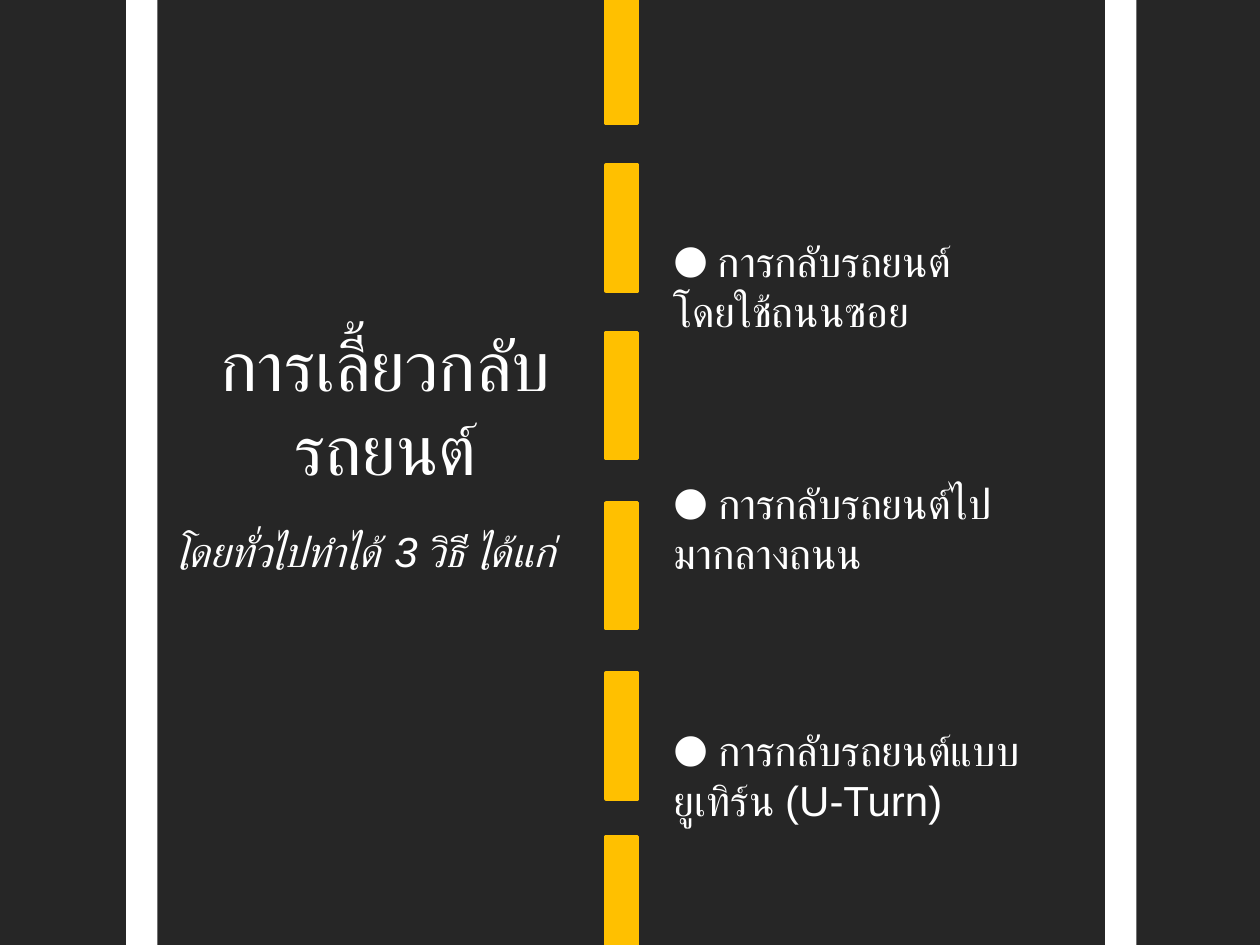
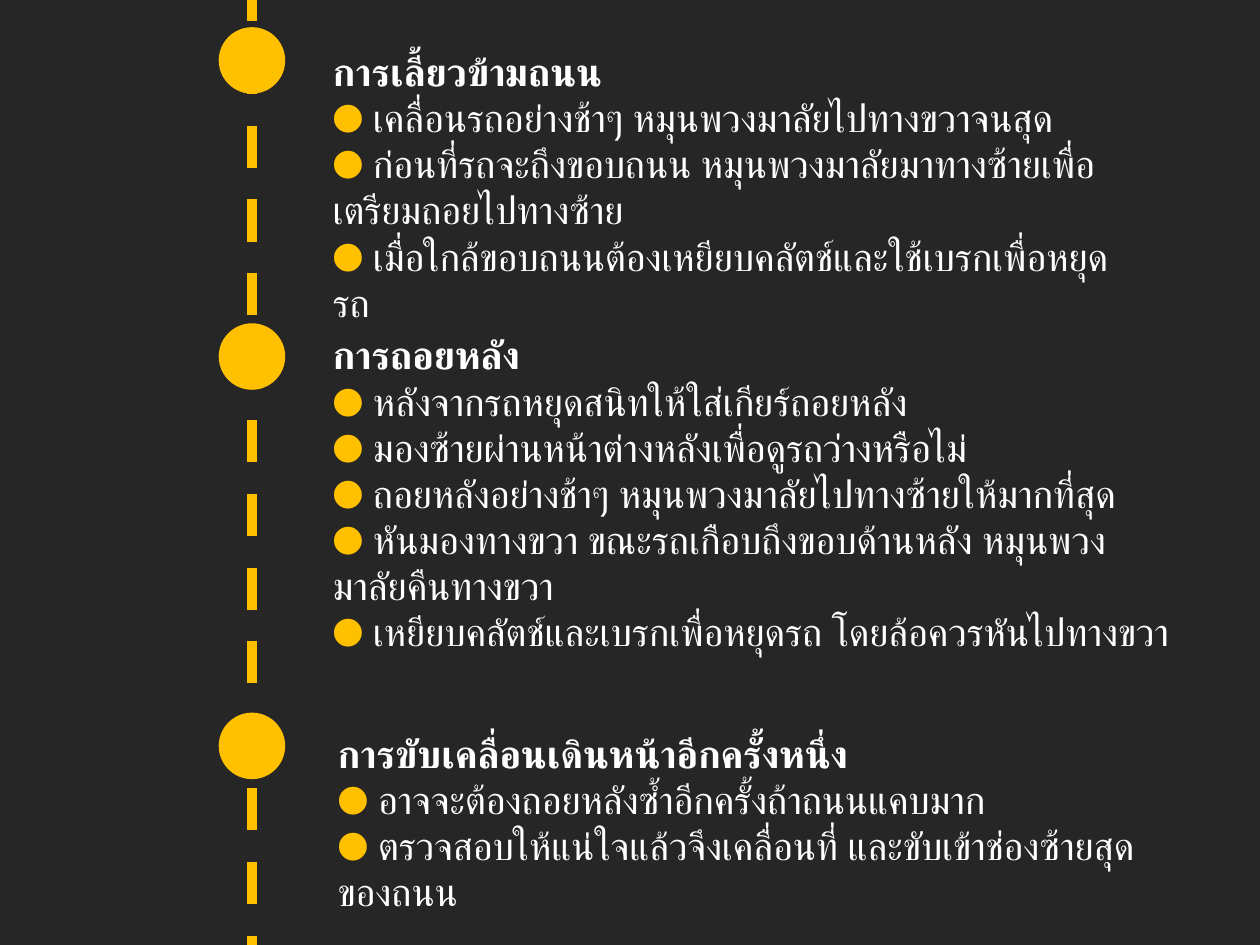
from lxml.etree import SubElement
from pptx import Presentation
from pptx.dml.color import RGBColor
from pptx.enum.dml import MSO_LINE
from pptx.enum.lang import MSO_LANGUAGE_ID as Language
from pptx.enum.shapes import MSO_CONNECTOR as Connector, MSO_SHAPE as Shape
from pptx.enum.text import MSO_ANCHOR as Anchor, MSO_AUTO_SIZE as AutoSize, PP_ALIGN as Align
from pptx.oxml.ns import qn
from pptx.util import Inches, Pt

ASPHALT = RGBColor(0x26, 0x26, 0x26)
WHITE = RGBColor(0xFF, 0xFF, 0xFF)
YELLOW = RGBColor(0xFF, 0xC0, 0x00)
FONT = "Arial"
BULLET = "●"

TITLE_LAYOUT, COMPARISON_LAYOUT = 0, 4

DASH_TOPS = (-0.02, 1.31, 2.64, 3.99, 5.34, 6.64)
EDGE_LINES = ((1, -0.14), (8.77, -0.25))
METHODS = (
    ("การกลับรถยนต์โดยใช้ถนนซอย", (5.25, 1.82, 2.83, 0.91)),
    ("การกลับรถยนต์ไปมากลางถนน", (5.25, 3.74, 2.75, 0.91)),
    ("การกลับรถยนต์แบบยูเทิร์น (U-Turn)", (5.25, 5.7, 3.09, 0.91)),
)

# Each step: marker top, text box, heading, instructions
STEPS = (
    (0.23, (2.54, 0.33, 6.54, 1.95), "การเลี้ยวข้ามถนน", (
        "เคลื่อนรถอย่างช้าๆ หมุนพวงมาลัยไปทางขวาจนสุด",
        "ก่อนที่รถจะถึงขอบถนน หมุนพวงมาลัยมาทางซ้ายเพื่อเตรียมถอยไปทางซ้าย",
        "เมื่อใกล้ขอบถนนต้องเหยียบคลัตช์และใช้เบรกเพื่อหยุดรถ",
    )),
    (2.58, (2.54, 2.58, 6.92, 2.69), "การถอยหลัง", (
        "หลังจากรถหยุดสนิทให้ใส่เกียร์ถอยหลัง",
        "มองซ้ายผ่านหน้าต่างหลังเพื่อดูรถว่างหรือไม่",
        "ถอยหลังอย่างช้าๆ หมุนพวงมาลัยไปทางซ้ายให้มากที่สุด",
        "หันมองทางขวา ขณะรถเกือบถึงขอบด้านหลัง หมุนพวงมาลัยคืนทางขวา",
        "เหยียบคลัตช์และเบรกเพื่อหยุดรถ โดยล้อควรหันไปทางขวา",
    )),
    (5.67, (2.58, 5.74, 6.92, 1.21), "การขับเคลื่อนเดินหน้าอีกครั้งหนึ่ง", (
        "อาจจะต้องถอยหลังซ้ำอีกครั้งถ้าถนนแคบมาก",
        "ตรวจสอบให้แน่ใจแล้วจึงเคลื่อนที่ และขับเข้าช่องซ้ายสุดของถนน",
    )),
)


class RoadDeck:
    """Holds the road style and the slide being built."""

    def __init__(self):
        self.presentation = Presentation()
        self.presentation.slide_width = Inches(10)
        self.presentation.slide_height = Inches(7.5)
        fill = self.presentation.slide_master.background.fill
        fill.solid()
        fill.fore_color.rgb = ASPHALT
        self.slide = None

    def new_slide(self, layout):
        self.slide = self.presentation.slides.add_slide(
            self.presentation.slide_layouts[layout])

    def shape(self, kind, box, color, outlined=True):
        shape = self.slide.shapes.add_shape(kind, *map(Inches, box))
        shape.shadow.inherit = False
        shape.fill.solid()
        shape.fill.fore_color.rgb = color
        if outlined:
            shape.line.color.rgb = color
            shape.line.width = Pt(2)
        else:
            shape.line.fill.background()

    def dashed_line(self, start, end, width):
        line = self.slide.shapes.add_connector(
            Connector.STRAIGHT, *map(Inches, start + end))
        line.line.color.rgb = YELLOW
        line.line.width = Pt(width)
        line.line.dash_style = MSO_LINE.DASH
        SubElement(line._element.spPr, qn("a:effectLst"))

    def run(self, paragraph, text, size, color=WHITE, bold=False, italic=False):
        run = paragraph.add_run()
        run.text = text
        font = run.font
        font.name, font.size = FONT, Pt(size)
        font.bold, font.italic = bold, italic
        font.color.rgb = color
        font.language_id = Language.THAI

    def paragraphs(self, shape, box, count, align=Align.LEFT):
        """Place a text shape and return its plain, unbulleted paragraphs."""
        shape.left, shape.top, shape.width, shape.height = map(Inches, box)
        frame = shape.text_frame
        frame.word_wrap = True
        frame.auto_size = AutoSize.SHAPE_TO_FIT_TEXT
        frame.vertical_anchor = Anchor.TOP
        for _ in range(count - 1):
            frame.add_paragraph()
        for paragraph in frame.paragraphs:
            paragraph.alignment = align
            paragraph.space_before = Pt(0)
            properties = paragraph._p.get_or_add_pPr()
            properties.set("marL", "0")
            properties.set("indent", "0")
            SubElement(properties, qn("a:buNone"))
        return frame.paragraphs

    def title(self, lines, box, size):
        paragraphs = self.paragraphs(
            self.slide.shapes.title, box, len(lines), Align.CENTER)
        for paragraph, line in zip(paragraphs, lines):
            self.run(paragraph, line, size)

    def subtitle(self, text, box, size):
        paragraph, = self.paragraphs(self.slide.placeholders[1], box, 1)
        self.run(paragraph, text, size, italic=True)

    def label(self, text, box, size):
        text_box = self.slide.shapes.add_textbox(*map(Inches, box))
        paragraph, = self.paragraphs(text_box, box, 1)
        self.run(paragraph, text, size)

    def step_list(self, index, box, heading, items, size):
        first, *rest = self.paragraphs(
            self.slide.placeholders[index], box, len(items) + 1)
        self.run(first, heading, size, bold=True)
        for paragraph, item in zip(rest, items):
            self.run(paragraph, BULLET, size, YELLOW)
            self.run(paragraph, f" {item}", size)

    def remove_empty_placeholders(self):
        for placeholder in list(self.slide.placeholders):
            if not placeholder.text_frame.text:
                placeholder._element.getparent().remove(placeholder._element)


def build_overview(deck):
    deck.new_slide(TITLE_LAYOUT)
    # Road markings
    for top in DASH_TOPS:
        deck.shape(Shape.RECTANGLE, (4.81, top, 0.25, 1), YELLOW)
    for left, top in EDGE_LINES:
        deck.shape(Shape.RECTANGLE, (left, top, 0.25, 7.83), WHITE, outlined=False)
    # Topic on the left lane, methods on the right lane
    deck.title(("การเลี้ยวกลับ", "รถยนต์"), (0.97, 2.5, 4.18, 1.45), 40)
    deck.subtitle("โดยทั่วไปทำได้ 3 วิธี ได้แก่", (1.32, 4.12, 3.43, 0.5), 24)
    for method, box in METHODS:
        deck.label(f"{BULLET} {method}", box, 24)


def build_steps(deck):
    deck.new_slide(COMPARISON_LAYOUT)
    # Timeline
    deck.dashed_line((2, -0.17), (2, 7.5), 6)
    # Steps with their markers
    for index, (marker_top, box, heading, items) in enumerate(STEPS, start=1):
        deck.step_list(index, box, heading, items, 22)
        deck.shape(Shape.OVAL, (1.75, marker_top, 0.5, 0.5), YELLOW)
    deck.remove_empty_placeholders()


def main():
    deck = RoadDeck()
    build_overview(deck)
    build_steps(deck)
    deck.presentation.save("out.pptx")


if __name__ == "__main__":
    main()
